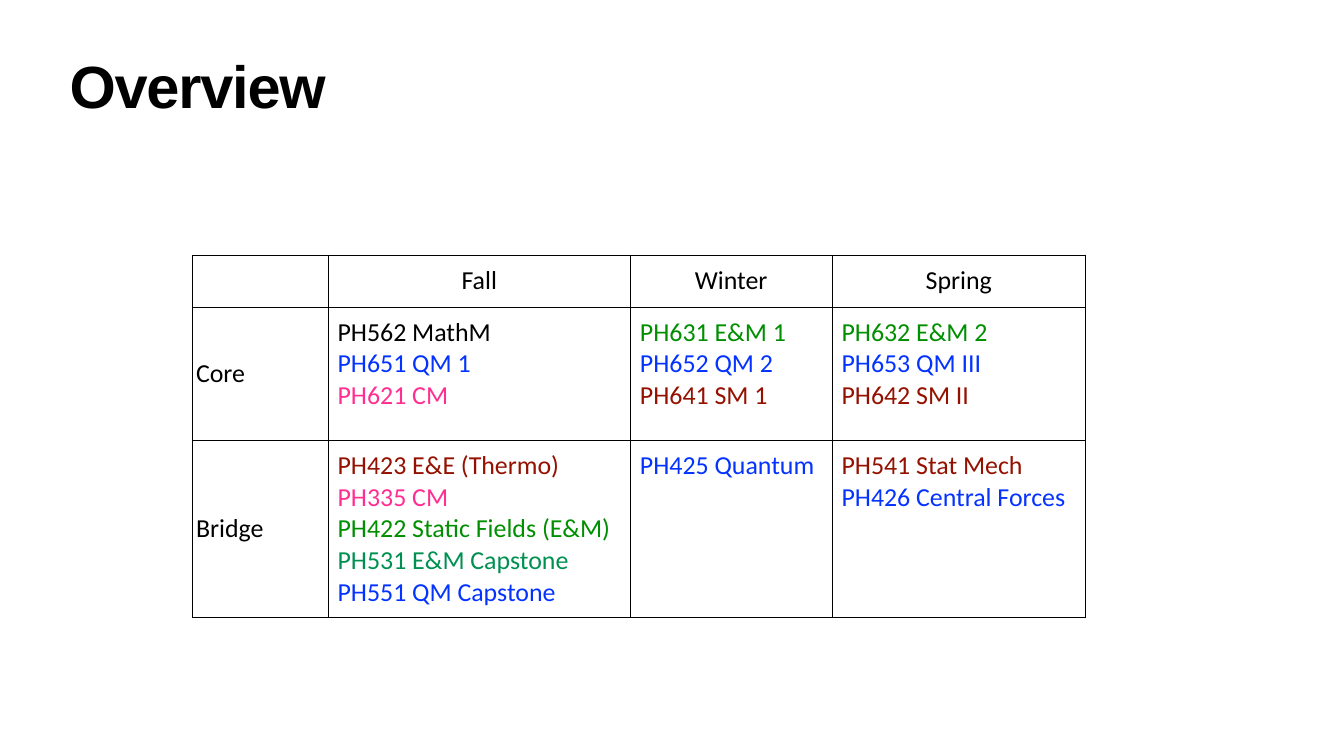
from dataclasses import dataclass

from lxml.etree import SubElement
from pptx import Presentation
from pptx.dml.color import RGBColor
from pptx.enum.text import MSO_ANCHOR, MSO_AUTO_SIZE, PP_ALIGN
from pptx.oxml.ns import qn
from pptx.slide import Slide
from pptx.table import _Cell
from pptx.text.text import _Paragraph
from pptx.util import Inches, Pt

COLORS = {
    "black": "000000",
    "blue": "0433FF",
    "pink": "FF2F92",
    "green": "008F00",
    "teal": "009051",
    "red": "941100",
}
TERMS = ["Fall", "Winter", "Spring"]
COLUMN_WIDTHS = [2.69, 6, 4, 5.03]
ROW_HEIGHTS = [1.03, 2.65, 3.11]


@dataclass
class Course:
    name: str
    color: str


@dataclass
class Level:
    name: str
    terms: list[list[Course]]


LEVELS = [
    Level("Core", [
        [Course("PH562 MathM", "black"), Course("PH651 QM 1", "blue"),
         Course("PH621 CM", "pink")],
        [Course("PH631 E&M 1", "green"), Course("PH652 QM 2", "blue"),
         Course("PH641 SM 1", "red")],
        [Course("PH632 E&M 2", "green"), Course("PH653 QM III", "blue"),
         Course("PH642 SM II", "red")],
    ]),
    Level("Bridge", [
        [Course("PH423 E&E (Thermo)", "red"), Course("PH335 CM", "pink"),
         Course("PH422 Static Fields (E&M)", "green"),
         Course("PH531 E&M Capstone", "teal"), Course("PH551 QM Capstone", "blue")],
        [Course("PH425 Quantum", "blue")],
        [Course("PH541 Stat Mech", "red"), Course("PH426 Central Forces", "blue")],
    ]),
]


def write(paragraph: _Paragraph, text: str, *, size: float = 37, font: str = "Calibri",
          color: str = "black", bold: bool = False, align=PP_ALIGN.LEFT,
          spacing: float = 0) -> None:
    paragraph.alignment = align
    run = paragraph.add_run()
    run.text = text
    run.font.size = Pt(size)
    run.font.name = font
    run.font.bold = bold
    run.font.color.rgb = RGBColor.from_string(COLORS[color])
    if spacing:
        run.font._element.set("spc", str(round(spacing * 100)))


def set_margins(target, horizontal: float, vertical: float) -> None:
    target.margin_left = target.margin_right = Inches(horizontal)
    target.margin_top = target.margin_bottom = Inches(vertical)


def add_borders(cell: _Cell) -> None:
    properties = cell._tc.get_or_add_tcPr()
    for side in ("a:lnL", "a:lnR", "a:lnT", "a:lnB"):
        line = SubElement(properties, qn(side), w=str(Pt(1)))
        fill = SubElement(line, qn("a:solidFill"))
        SubElement(fill, qn("a:srgbClr"), val=COLORS["black"])


def format_cell(cell: _Cell) -> None:
    add_borders(cell)
    cell.fill.background()
    set_margins(cell, 0.07, 0)
    cell.vertical_anchor = MSO_ANCHOR.MIDDLE


def fill_courses(cell: _Cell, courses: list[Course]) -> None:
    set_margins(cell, 0.19, 0.19)
    cell.vertical_anchor = MSO_ANCHOR.TOP
    frame = cell.text_frame
    for index, course in enumerate(courses):
        paragraph = frame.add_paragraph() if index else frame.paragraphs[0]
        write(paragraph, course.name, color=course.color)


def add_title(slide: Slide, text: str) -> None:
    title = slide.shapes.title
    title.left, title.top = Inches(1.32), Inches(1.18)
    title.width, title.height = Inches(24.03), Inches(1.57)
    frame = title.text_frame
    frame.auto_size = MSO_AUTO_SIZE.NONE
    frame.vertical_anchor = MSO_ANCHOR.TOP
    set_margins(frame, 0.06, 0.06)
    paragraph = frame.paragraphs[0]
    paragraph.line_spacing = 0.8
    write(paragraph, text, size=85, font="Arial", bold=True, spacing=-1.7)


def add_course_table(slide: Slide) -> None:
    table = slide.shapes.add_table(
        len(ROW_HEIGHTS), len(COLUMN_WIDTHS), Inches(3.82), Inches(5.06),
        Inches(sum(COLUMN_WIDTHS)), Inches(sum(ROW_HEIGHTS))).table
    table.first_row = table.horz_banding = False
    for column, width in zip(table.columns, COLUMN_WIDTHS):
        column.width = Inches(width)
    for row, height in zip(table.rows, ROW_HEIGHTS):
        row.height = Inches(height)
    for cell in table.iter_cells():
        format_cell(cell)

    for column, term in enumerate(TERMS, start=1):
        write(table.cell(0, column).text_frame.paragraphs[0], term,
              align=PP_ALIGN.CENTER)
    for row, level in enumerate(LEVELS, start=1):
        write(table.cell(row, 0).text_frame.paragraphs[0], level.name)
        for column, courses in enumerate(level.terms, start=1):
            fill_courses(table.cell(row, column), courses)


def main() -> None:
    presentation = Presentation()
    presentation.slide_width, presentation.slide_height = Inches(26.67), Inches(15)
    slide = presentation.slides.add_slide(presentation.slide_layouts[5])
    add_title(slide, "Overview")
    add_course_table(slide)
    presentation.save("out.pptx")


if __name__ == "__main__":
    main()
